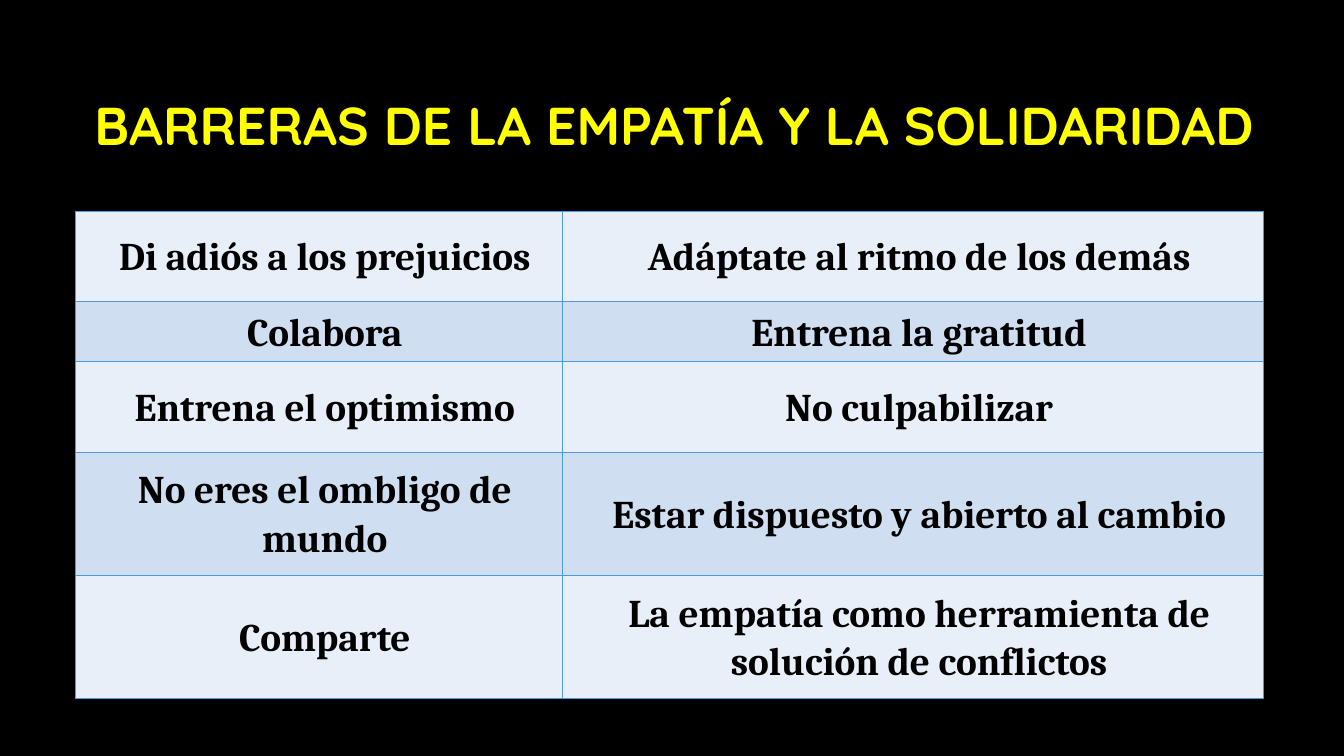
from dataclasses import dataclass

from lxml import etree
from pptx import Presentation
from pptx import util as u
from pptx.dml.color import RGBColor
from pptx.enum import text
from pptx.oxml.ns import qn


@dataclass(frozen=True)
class Theme:
    background: str = "000000"
    title_color: str = "FFFF00"
    title_font: str = "Quicksand"
    title_size: float = 38
    body_color: str = "000000"
    body_font: str = "Cambria"
    body_size: float = 28
    bands: tuple = ("E9EFF9", "D0DEF2")
    border: str = "4A9BDC"
    border_width: float = 1


def put_text(tf, content, *, font, size, color, align, spacing, after=0, indent=0):
    """Write one bold paragraph into a text frame."""
    tf.word_wrap = True
    p = tf.paragraphs[0]
    p.alignment = align
    p.line_spacing = spacing
    p.space_before, p.space_after = u.Pt(0), u.Pt(after)
    pPr = p._p.get_or_add_pPr()
    pPr.set("marL", str(u.Pt(indent)))
    pPr.set("indent", "0")
    r = p.add_run()
    r.text = content
    r.font.name, r.font.size, r.font.bold = font, u.Pt(size), True
    r.font.color.rgb = RGBColor.from_string(color)


class SlideBuilder:
    def __init__(self, prs, theme):
        self.theme = theme
        self.s = prs.slides.add_slide(prs.slide_layouts[5])
        fill = self.s.background.fill
        fill.solid()
        fill.fore_color.rgb = RGBColor.from_string(theme.background)

    def title(self, content, left, top, width, height):
        t = self.theme
        sp = self.s.shapes.title
        sp.left, sp.top = u.Pt(left), u.Pt(top)
        sp.width, sp.height = u.Pt(width), u.Pt(height)
        tf = sp.text_frame
        tf.auto_size = text.MSO_AUTO_SIZE.NONE
        tf.vertical_anchor = text.MSO_ANCHOR.MIDDLE
        put_text(tf, content, font=t.title_font, size=t.title_size,
                 color=t.title_color, align=text.PP_ALIGN.RIGHT, spacing=0.9)

    def borders(self, cell):
        tcPr = cell._tc.get_or_add_tcPr()
        for side in ("lnL", "lnR", "lnT", "lnB"):
            ln = etree.SubElement(tcPr, qn(f"a:{side}"),
                                  w=str(u.Pt(self.theme.border_width)))
            solid = etree.SubElement(ln, qn("a:solidFill"))
            etree.SubElement(solid, qn("a:srgbClr"), val=self.theme.border)

    def table(self, rows, left, top, widths, heights, indents):
        t = self.theme
        frame = self.s.shapes.add_table(
            len(rows), len(widths), u.Pt(left), u.Pt(top),
            u.Pt(sum(widths)), u.Pt(sum(heights)))
        table = frame.table
        table.first_row = table.horz_banding = False
        for column, width in zip(table.columns, widths):
            column.width = u.Pt(width)
        for i, (row, height) in enumerate(zip(rows, heights)):
            table.rows[i].height = u.Pt(height)
            for j, content in enumerate(row):
                cell = table.cell(i, j)
                cell.margin_left = cell.margin_right = u.Pt(5)
                cell.margin_top = cell.margin_bottom = 0
                cell.vertical_anchor = text.MSO_ANCHOR.MIDDLE
                self.borders(cell)
                cell.fill.solid()
                cell.fill.fore_color.rgb = RGBColor.from_string(t.bands[i % 2])
                put_text(cell.text_frame, content, font=t.body_font,
                         size=t.body_size, color=t.body_color,
                         align=text.PP_ALIGN.CENTER, spacing=1.07,
                         after=8, indent=indents[j])


BARRIERS = [
    ("Di adiós a los prejuicios", "Adáptate al ritmo de los demás"),
    ("Colabora", "Entrena la gratitud"),
    ("Entrena el optimismo", "No culpabilizar"),
    ("No eres el ombligo de mundo", "Estar dispuesto y abierto al cambio"),
    ("Comparte", "La empatía como herramienta de solución de conflictos"),
]


def main():
    prs = Presentation()
    prs.slide_width, prs.slide_height = u.Pt(960), u.Pt(540)
    slide = SlideBuilder(prs, Theme())

    # Heading
    slide.title("BARRERAS DE LA EMPATÍA Y LA SOLIDARIDAD", 24, 41, 879, 101.5)

    # Table of barriers
    slide.table(BARRIERS, 54, 151, widths=(348, 500.5),
                heights=(64.5, 43, 64.5, 88, 88), indents=(8, 8.6))

    prs.save("out.pptx")


if __name__ == "__main__":
    main()
